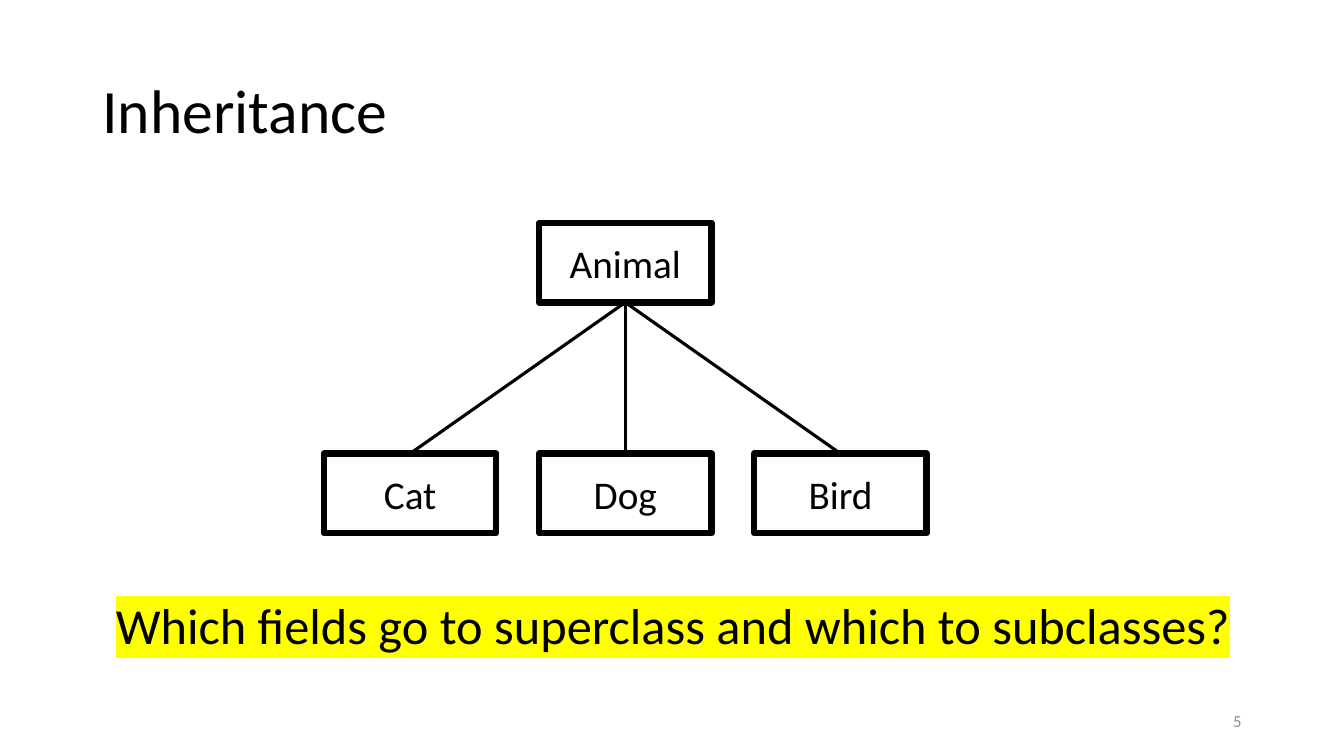
from lxml import etree
from pptx import Presentation
from pptx.dml.color import RGBColor
from pptx.enum import shapes, text
from pptx.oxml.ns import qn
from pptx.util import Pt

BLACK = RGBColor(0, 0, 0)
WHITE = RGBColor(255, 255, 255)
GRAY = RGBColor(0x8C, 0x8C, 0x8C)
YELLOW = RGBColor(255, 255, 0)
FONT = "Calibri"
WIDE, HIGH = 123.1, 56.9
LEFT, STEP = 231.4, 153.7
TOP, LOW = 159.1, 324


def write(frame, words, size, align, color=BLACK, anchor=text.MSO_ANCHOR.MIDDLE):
    frame.vertical_anchor = anchor
    para = frame.paragraphs[0]
    para.text = words
    para.alignment = align
    para.font.size = Pt(size)
    para.font.name = FONT
    para.font.color.rgb = color
    return para


def add_title(slide, words):
    title = slide.shapes.title
    title.left, title.top = Pt(66), Pt(28.8)
    title.width, title.height = Pt(828), Pt(104.4)
    para = write(title.text_frame, words, 44, text.PP_ALIGN.LEFT)
    para.line_spacing = 0.9


def add_number(slide, words):
    label = slide.shapes.add_textbox(Pt(678), Pt(500.4), Pt(216), Pt(28.8))
    label.text_frame.word_wrap = True
    write(label.text_frame, words, 12, text.PP_ALIGN.RIGHT, GRAY)


def add_class(slide, words, col, top):
    box = slide.shapes.add_shape(
        shapes.MSO_SHAPE.RECTANGLE,
        Pt(LEFT + col * STEP), Pt(top), Pt(WIDE), Pt(HIGH))
    box.shadow.inherit = False
    box.fill.solid()
    box.fill.fore_color.rgb = WHITE
    box.line.color.rgb = BLACK
    box.line.width = Pt(4.5)
    write(box.text_frame, words, 28, text.PP_ALIGN.CENTER)
    return box


def link(slide, base, child):
    line = slide.shapes.add_connector(shapes.MSO_CONNECTOR.STRAIGHT, 0, 0, 0, 0)
    line.begin_connect(base, 2)
    line.end_connect(child, 0)
    line.line.color.rgb = BLACK
    line.line.width = Pt(2.25)
    etree.SubElement(line._element.spPr, qn("a:effectLst"))


def add_query(slide, words):
    label = slide.shapes.add_textbox(Pt(75.6), Pt(420.5), Pt(818), Pt(51.1))
    frame = label.text_frame
    frame.word_wrap = False
    frame.auto_size = text.MSO_AUTO_SIZE.SHAPE_TO_FIT_TEXT
    para = write(frame, words, 36, text.PP_ALIGN.LEFT, anchor=text.MSO_ANCHOR.TOP)
    props = para.runs[0]._r.get_or_add_rPr()
    mark = etree.SubElement(props, qn("a:highlight"))
    etree.SubElement(mark, qn("a:srgbClr"), val=str(YELLOW))


def main():
    deck = Presentation()
    deck.slide_width, deck.slide_height = Pt(960), Pt(540)
    slide = deck.slides.add_slide(deck.slide_layouts[5])
    add_title(slide, "Inheritance")
    add_number(slide, "5")
    base = add_class(slide, "Animal", 1, TOP)
    kids = [add_class(slide, name, col, LOW)
            for col, name in enumerate(("Cat", "Dog", "Bird"))]
    for child in kids:
        link(slide, base, child)
    add_query(slide, "Which fields go to superclass and which to subclasses?")
    deck.save("out.pptx")


if __name__ == "__main__":
    main()
